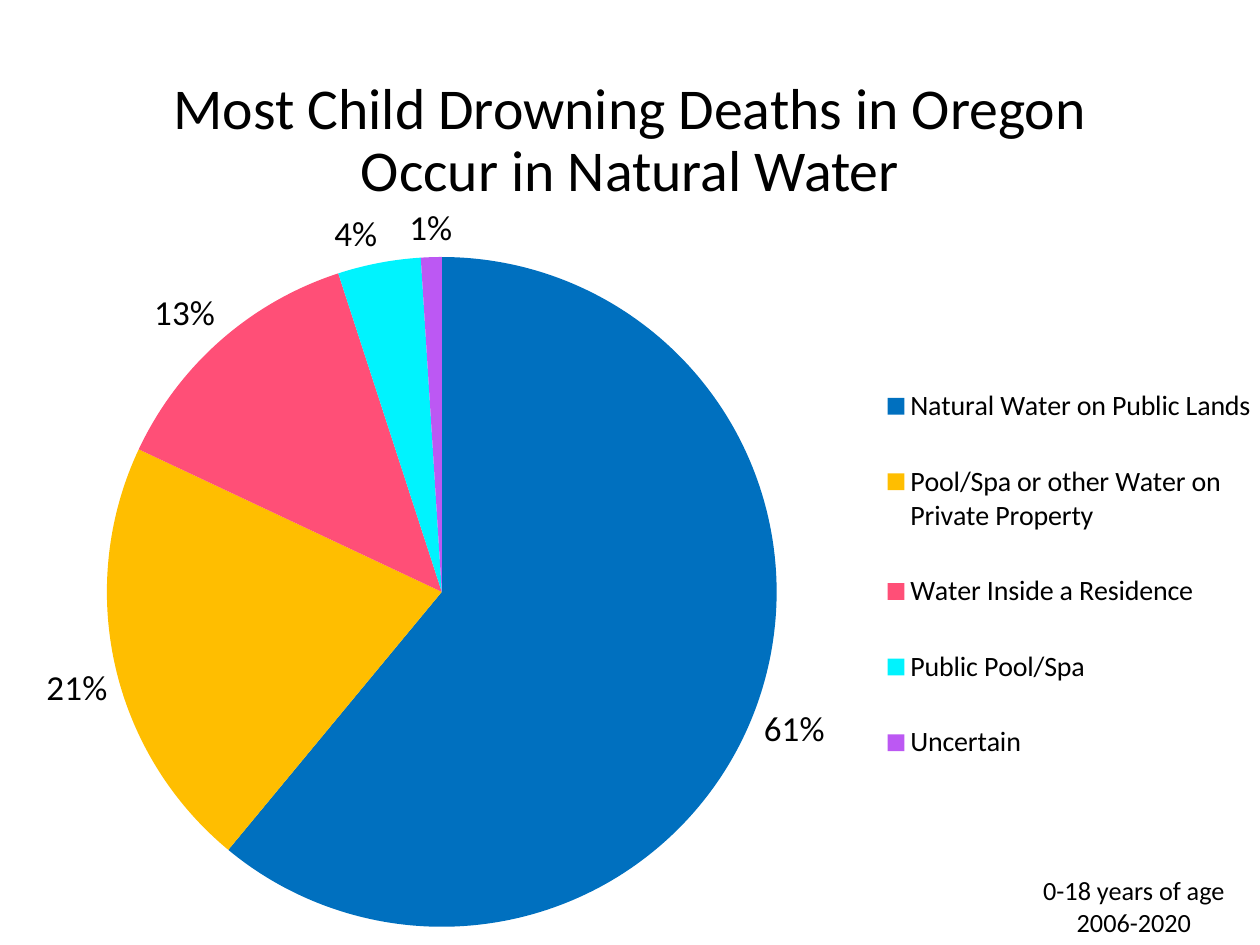
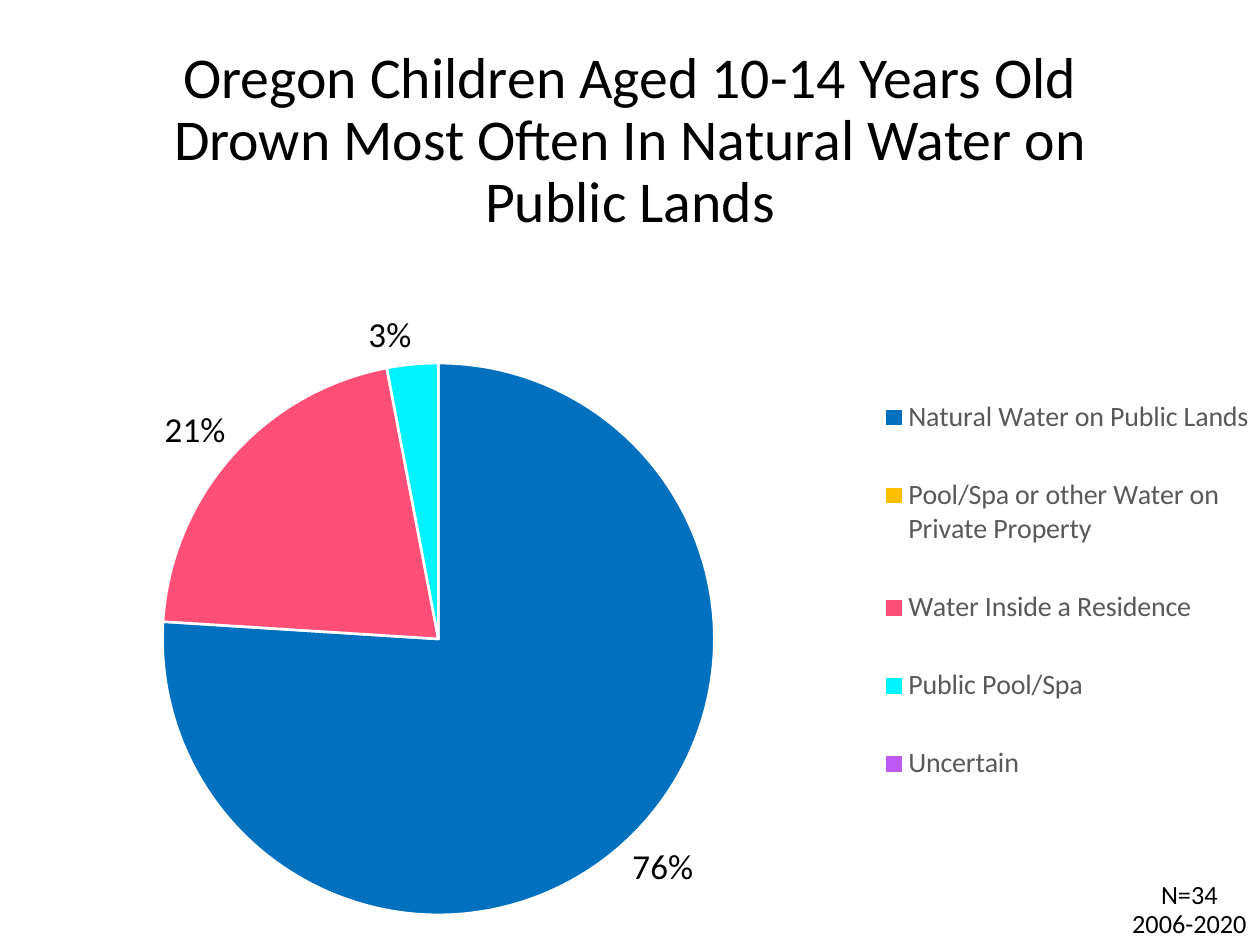
"""Build two slides with pie charts on where children drown in Oregon."""
from lxml import etree
from pptx import Presentation
from pptx import util as u
from pptx.chart import data
from pptx.dml import color
from pptx.enum import chart as charts
from pptx.enum import text
from pptx.oxml import ns

THEME = {
    "font": "Calibri",
    "ink": "000000",
    "grey": "595959",
    "white": "FFFFFF",
    "slices": ["0070BF", "FFBE00", "FF4F77", "00F3FE", "BC58F3"],
    "title": 33,
    "label": 20,
    "legend": 16,
    "note": 15,
    "chart": 10,
}
PLACES = [
    "Natural Water on Public Lands",
    "Pool/Spa or other Water on Private Property",
    "Water Inside a Residence",
    "Public Pool/Spa",
    "Uncertain",
]
TITLE_BOX = (0.69, 0.4, 8.62, 1.45)
PAGES = [
    {
        "title": "Most Child Drowning Deaths in Oregon Occur in Natural Water",
        "shares": [61, 21, 13, 4, 1],
        "chart_box": (0, 1.5, 10.09, 6),
        "pie_area": (0.084, 0.09, 0.527, 0.886),
        "legend_area": (0.686, 0.21, 0.31, 0.6),
        "legend_color": "ink",
        "outline": None,
        "notes": [((8.17, 6.89, 1.66, 0.61), ["0-18 years of age", "2006-2020"])],
    },
    {
        "title": "Oregon Children Aged 10-14 Years Old Drown Most Often "
                 "In Natural Water on Public Lands",
        "shares": [76, 0, 21, 3, 0],
        "chart_box": (0, 2.34, 10, 5.16),
        "pie_area": (0.129, 0.105, 0.438, 0.849),
        "legend_area": (0.697, 0.095, 0.3, 0.72),
        "legend_color": "grey",
        "outline": "white",
        "notes": [
            ((9.11, 6.92, 0.66, 0.35), ["N=34"]),
            ((8.88, 7.15, 1.12, 0.35), ["2006-2020"]),
        ],
    },
]


def inches(box):
    return [u.Inches(length) for length in box]


def apply(target, **values):
    for name, value in values.items():
        setattr(target, name, value)


def style_font(font, size, tint="ink"):
    apply(font, name=THEME["font"], size=u.Pt(THEME[size]))
    font.color.rgb = color.RGBColor.from_string(THEME[tint])


def add_text(page, place, lines, size, frame_format, spacing=None):
    frame = page.shapes.add_textbox(*inches(place)).text_frame
    apply(frame, **frame_format)
    frame.text = "\n".join(lines)
    for para in frame.paragraphs:
        apply(para, alignment=text.PP_ALIGN.CENTER, line_spacing=spacing)
        for span in para.runs:
            style_font(span.font, size)


def child(parent, tag, value=None):
    node = etree.SubElement(parent, ns.qn(tag))
    if value is not None:
        node.set("val", str(value))
    return node


def make_layout(area, inner=False):
    layout = etree.Element(ns.qn("c:layout"))
    manual = child(layout, "c:manualLayout")
    if inner:
        child(manual, "c:layoutTarget", "inner")
    for axis in "xy":
        child(manual, f"c:{axis}Mode", "edge")
    for key, value in zip("xywh", area):
        child(manual, f"c:{key}", value)
    return layout


def place_parts(chart, pie_area, legend_area):
    for old in chart.element.xpath(".//c:plotArea/c:layout | .//c:legend/c:layout"):
        old.getparent().remove(old)
    plot_area = chart.element.xpath(".//c:plotArea")[0]
    plot_area.insert(0, make_layout(pie_area, inner=True))
    position = chart.element.xpath(".//c:legend/c:legendPos")[0]
    position.addnext(make_layout(legend_area))


def hide_zero_labels(chart, shares):
    labels = chart.element.xpath(".//c:ser/c:dLbls")[0]
    zeros = [index for index, share in enumerate(shares) if share == 0]
    for order, index in enumerate(zeros):
        label = etree.Element(ns.qn("c:dLbl"))
        child(label, "c:idx", index)
        child(label, "c:delete", 1)
        labels.insert(order, label)


def add_pie(page, content):
    source = data.CategoryChartData(number_format="0")
    source.categories = PLACES
    source.add_series("Series 1", content["shares"])
    chart = page.shapes.add_chart(
        charts.XL_CHART_TYPE.PIE, *inches(content["chart_box"]), source).chart
    apply(chart, has_title=False, has_legend=True)
    style_font(chart.font, "chart")
    apply(chart.legend, position=charts.XL_LEGEND_POSITION.RIGHT,
          include_in_layout=False)
    style_font(chart.legend.font, "legend", content["legend_color"])

    plot = chart.plots[0]
    plot.vary_by_categories = True
    series = plot.series[0]
    for index, tint in enumerate(THEME["slices"]):
        look = series.points[index].format
        look.fill.solid()
        look.fill.fore_color.rgb = color.RGBColor.from_string(tint)
        if content["outline"]:
            look.line.color.rgb = color.RGBColor.from_string(THEME[content["outline"]])
            look.line.width = u.Pt(1.5)
        else:
            look.line.fill.background()

    apply(series.data_labels, show_percentage=True, show_value=False,
          number_format="0%", number_format_is_linked=False,
          position=charts.XL_LABEL_POSITION.OUTSIDE_END)
    style_font(series.data_labels.font, "label")
    hide_zero_labels(chart, content["shares"])
    place_parts(chart, content["pie_area"], content["legend_area"])


def main():
    deck = Presentation()
    apply(deck, slide_width=u.Inches(10), slide_height=u.Inches(7.5))
    title_format = {"word_wrap": True, "vertical_anchor": text.MSO_ANCHOR.MIDDLE}
    note_format = {"word_wrap": False, "auto_size": text.MSO_AUTO_SIZE.SHAPE_TO_FIT_TEXT}
    for content in PAGES:
        page = deck.slides.add_slide(deck.slide_layouts[6])
        add_text(page, TITLE_BOX, [content["title"]], "title", title_format, 0.9)
        add_pie(page, content)
        for place, lines in content["notes"]:
            add_text(page, place, lines, "note", note_format)
    deck.save("out.pptx")


if __name__ == "__main__":
    main()
